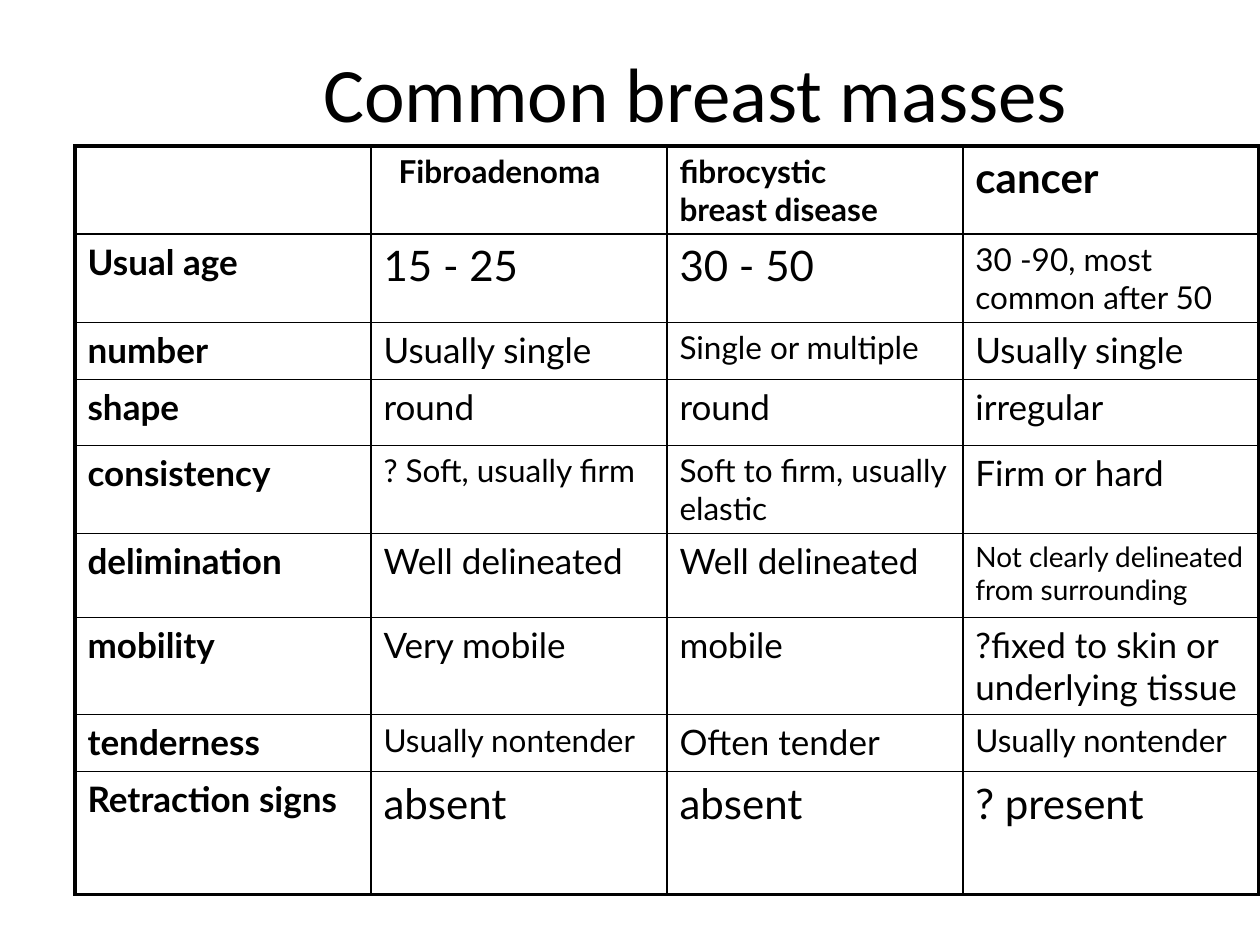
from dataclasses import dataclass

from lxml import etree
from pptx import Presentation
from pptx.dml.color import RGBColor
from pptx.enum.text import MSO_ANCHOR, PP_ALIGN
from pptx.oxml.ns import qn
from pptx.util import Pt

CENTER = PP_ALIGN.CENTER
MIDDLE = MSO_ANCHOR.MIDDLE
EMU_PER_PX = 914400 / 126
COLORS = {"ink": "000000"}
TITLE_FONT, TABLE_FONT = "Calibri", "Lato"
OUTER_BORDER, INNER_BORDER = 2.25, 1
COLUMN_WIDTH = 296
HEADER_INDENT = 15


@dataclass(frozen=True)
class Entry:
    text: str
    size: int = 20
    indent: int = 0


@dataclass(frozen=True)
class Row:
    height: int
    entries: tuple[Entry, ...]


ROWS = (
    Row(88, (Entry(""), Entry("Fibroadenoma", 18, HEADER_INDENT),
             Entry("fibrocystic\nbreast disease", 18), Entry("cancer", 24))),
    Row(88, (Entry("Usual age"), Entry("15 - 25", 24), Entry("30 - 50", 24),
             Entry("30 -90, most common after 50", 18))),
    Row(57, (Entry("number"), Entry("Usually single"),
             Entry("Single or multiple", 18), Entry("Usually single"))),
    Row(66, (Entry("shape"), Entry("round"), Entry("round"), Entry("irregular"))),
    Row(88, (Entry("consistency"), Entry("? Soft, usually firm", 18),
             Entry("Soft to firm, usually elastic", 18), Entry("Firm or hard"))),
    Row(84, (Entry("delimination"), Entry("Well delineated"), Entry("Well delineated"),
             Entry("Not clearly delineated from surrounding", 16))),
    Row(97, (Entry("mobility"), Entry("Very mobile"), Entry("mobile"),
             Entry("?fixed to skin or underlying tissue"))),
    Row(57, (Entry("tenderness"), Entry("Usually nontender", 18),
             Entry("Often tender"), Entry("Usually nontender", 18))),
    Row(123, (Entry("Retraction signs"), Entry("absent", 24),
              Entry("absent", 24), Entry("? present", 24))),
)


def px(length: int) -> int:
    return round(length * EMU_PER_PX)


def style_font(font, name: str, size: int, bold: bool = False) -> None:
    font.name = name
    font.size = Pt(size)
    font.bold = bold
    font.color.rgb = RGBColor.from_string(COLORS["ink"])


def add_title(slide, text: str) -> None:
    box = slide.shapes.add_textbox(px(159), px(29), px(1073), px(126))
    frame = box.text_frame
    frame.word_wrap = True
    frame.vertical_anchor = MIDDLE
    paragraph = frame.paragraphs[0]
    paragraph.text = text
    paragraph.alignment = CENTER
    style_font(paragraph.font, TITLE_FONT, 44)


def set_borders(cell, widths: dict[str, float]) -> None:
    """Put the border lines ahead of the fill, as the schema orders them."""
    properties = cell._tc.get_or_add_tcPr()
    for position, (side, width) in enumerate(widths.items()):
        line = etree.Element(qn(f"a:{side}"), w=str(Pt(width)))
        fill = etree.SubElement(line, qn("a:solidFill"))
        etree.SubElement(fill, qn("a:srgbClr"), val=COLORS["ink"])
        properties.insert(position, line)


def fill_cell(cell, entry: Entry, bold: bool) -> None:
    cell.fill.background()
    paragraph = cell.text_frame.paragraphs[0]
    paragraph.text = entry.text
    style_font(paragraph.font, TABLE_FONT, entry.size, bold)
    if entry.indent:
        paragraph._p.get_or_add_pPr().set("marL", str(px(entry.indent)))


def add_comparison_table(slide, rows: tuple[Row, ...]) -> None:
    column_count = len(rows[0].entries)
    table = slide.shapes.add_table(
        len(rows), column_count, px(75), px(146),
        px(COLUMN_WIDTH * column_count), px(sum(row.height for row in rows)),
    ).table
    table.first_row = False
    table.horz_banding = False
    for column in table.columns:
        column.width = px(COLUMN_WIDTH)
    for i, row in enumerate(rows):
        table.rows[i].height = px(row.height)
        for j, entry in enumerate(row.entries):
            cell = table.cell(i, j)
            fill_cell(cell, entry, bold=i == 0 or j == 0)
            on_edge = {"lnL": j == 0, "lnR": j == column_count - 1,
                       "lnT": i == 0, "lnB": i == len(rows) - 1}
            set_borders(cell, {side: OUTER_BORDER if edge else INNER_BORDER
                               for side, edge in on_edge.items()})


def main() -> None:
    presentation = Presentation()
    presentation.slide_width = px(1260)
    presentation.slide_height = px(945)
    slide = presentation.slides.add_slide(presentation.slide_layouts[6])
    add_title(slide, "Common breast masses")
    add_comparison_table(slide, ROWS)
    presentation.save("out.pptx")


if __name__ == "__main__":
    main()
